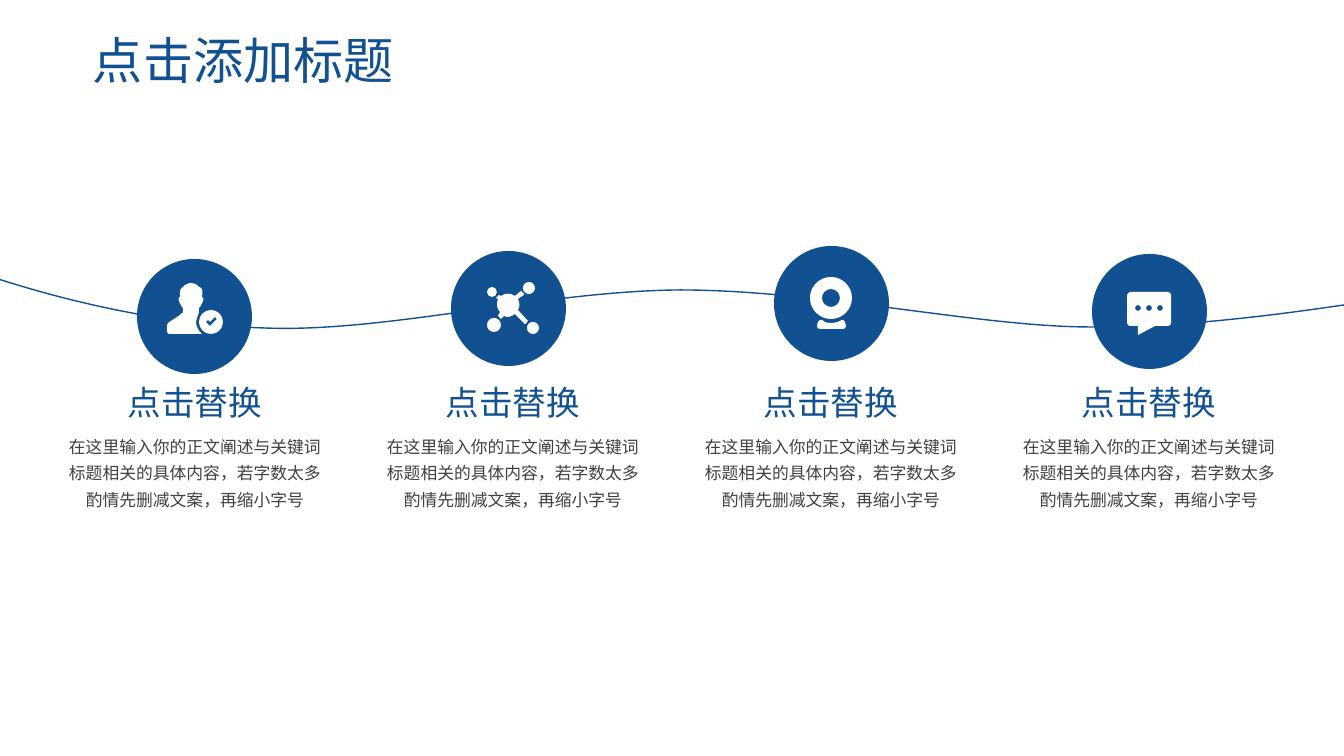
from lxml import etree
from pptx import Presentation
from pptx.dml.color import RGBColor
from pptx.enum.shapes import MSO_SHAPE
from pptx.enum.text import MSO_ANCHOR, MSO_AUTO_SIZE, PP_ALIGN
from pptx.oxml.ns import qn
from pptx.util import Pt

OVAL = MSO_SHAPE.OVAL
LEFT, CENTER = PP_ALIGN.LEFT, PP_ALIGN.CENTER
MIDDLE = MSO_ANCHOR.MIDDLE
NO_FIT, GROW = MSO_AUTO_SIZE.NONE, MSO_AUTO_SIZE.SHAPE_TO_FIT_TEXT

BLUE = RGBColor(0x12, 0x51, 0x91)
GREY = RGBColor(0x40, 0x40, 0x40)
WHITE = RGBColor(0xFF, 0xFF, 0xFF)
FONT = "Noto Sans CJK SC"
PX = 914400 / 100.8
ARC_HANDLE = 0.55


def circle(x, y, radius):
    handle = radius * ARC_HANDLE
    left, right, top, bottom = x - radius, x + radius, y - radius, y + radius
    return [
        (x, top),
        (x + handle, top, right, y - handle, right, y),
        (right, y + handle, x + handle, bottom, x, bottom),
        (x - handle, bottom, left, y + handle, left, y),
        (left, y - handle, x - handle, top, x, top),
    ]


TITLE = "点击添加标题"
HEADING = "点击替换"
BODY = "在这里输入你的正文阐述与关键词标题相关的具体内容，若字数太多酌情先删减文案，再缩小字号"

WAVE = [
    (-53, 261),
    (20, 289, 141, 324, 264, 328),
    (386, 333, 543, 291, 680, 290),
    (816, 290, 976, 326, 1085, 327),
    (1191, 328, 1300, 312, 1397, 297),
]
USER_ICON = [
    [(215, 317), (210, 322), (208, 320), (206, 322), (208, 324), (210, 326), (212, 324),
     (217, 319)],
    circle(211, 322, 12),
    [
        (191, 283), (193, 283, 195, 284, 196, 284), (198, 286, 199, 287, 199, 287),
        (199, 287, 204, 287, 202, 296), (202, 297, 202, 297, 202, 297),
        (203, 297, 204, 298, 203, 301), (202, 304, 201, 305, 201, 305),
        (201, 306, 200, 307, 199, 308), (199, 312),
        (198, 316, 196, 319, 196, 322), (196, 327, 199, 331, 202, 334),
        (169, 334), (168, 334, 167, 333, 167, 331), (167, 327),
        (167, 326, 167, 324, 168, 323), (175, 318, 181, 315, 182, 313),
        (183, 313, 183, 313, 183, 313), (183, 308),
        (182, 307, 181, 306, 181, 305), (181, 305, 180, 304, 179, 301),
        (178, 298, 179, 297, 180, 297), (180, 297, 180, 297, 180, 296),
        (180, 295, 180, 293, 180, 292), (180, 290, 181, 288, 183, 287),
        (183, 286, 184, 285, 185, 285), (186, 284, 187, 284, 188, 284),
        (188, 283, 189, 283, 191, 283),
    ],
]
NETWORK_ICON = [
    circle(533, 328, 6),
    circle(494, 325, 7),
    [
        (521, 291), (522, 292, 523, 293, 524, 294), (524, 295), (518, 299),
        (520, 303, 520, 307, 518, 310), (528, 321),
        (527, 322, 526, 323, 526, 324), (525, 324), (515, 314),
        (511, 317, 507, 318, 504, 316), (501, 319),
        (500, 318, 499, 317, 498, 316), (500, 312),
        (497, 309, 496, 304, 498, 299), (496, 298),
        (497, 297, 498, 296, 499, 295), (501, 296),
        (505, 293, 511, 293, 515, 296),
    ],
    circle(492, 292, 5),
    circle(529, 288, 6),
]
CAMERA_ICON = [
    circle(831, 298, 21),
    circle(831, 298, 9),
    [
        (843, 320), (843, 320, 842, 320, 842, 320), (838, 322, 836, 323, 831, 323),
        (826, 323, 824, 322, 822, 320), (821, 320, 820, 320, 820, 320),
        (819, 320, 818, 321, 818, 322), (817, 326),
        (817, 328, 818, 329, 820, 329), (843, 329),
        (845, 329, 846, 328, 846, 326), (845, 322),
        (845, 321, 844, 320, 843, 320),
    ],
]
CHAT_ICON = [
    [
        (1168, 292), (1130, 292), (1129, 292, 1127, 294, 1127, 295), (1127, 323),
        (1127, 325, 1129, 326, 1130, 326), (1138, 326), (1138, 335), (1155, 326),
        (1168, 326), (1170, 326, 1171, 325, 1171, 323), (1171, 295),
        (1171, 294, 1170, 292, 1168, 292),
    ],
    *[circle(x, 308, 3) for x in (1138, 1149, 1160)],
]
STEPS = [
    (137, 259, USER_ICON),
    (451, 251, NETWORK_ICON),
    (774, 246, CAMERA_ICON),
    (1092, 254, CHAT_ICON),
]
FIRST_CENTER, COLUMN_STEP = 195, 318
DISC_SIZE = 115
HEADING_WIDTH, BODY_WIDTH = 136, 255


def emu(*lengths):
    return [round(length * PX) for length in lengths]


def vertices(contour):
    return [
        emu(*segment[at:at + 2])
        for segment in contour for at in range(0, len(segment), 2)
    ]


def add_outline(page, contours, closed=True):
    builder = None
    for contour in contours:
        start, *rest = vertices(contour)
        if builder is None:
            builder = page.shapes.build_freeform(*start, scale=1.0)
        else:
            builder.move_to(*start)
        builder.add_line_segments(rest, close=closed)
    outline = builder.convert_to_shape()
    outline.shadow.inherit = False

    lines = iter(list(outline._element.iter(qn("a:lnTo"))))
    for contour in contours:
        for segment in contour[1:]:
            line = next(lines)
            if len(segment) == 6:
                line.tag = qn("a:cubicBezTo")
                for handle in (next(lines), next(lines)):
                    line.append(handle[0])
                    handle.getparent().remove(handle)
    return outline


def fill_plain(shape, color):
    shape.shadow.inherit = False
    shape.fill.solid()
    shape.fill.fore_color.rgb = color
    shape.line.fill.background()


def write(box, text, size, color, align=CENTER, spacing=None, wrap=True, fit=GROW,
          margins=(0, 0, 0, 0)):
    frame = box.text_frame
    frame.word_wrap = wrap
    frame.auto_size = fit
    (frame.margin_left, frame.margin_top,
     frame.margin_right, frame.margin_bottom) = emu(*margins)
    para = frame.paragraphs[0]
    para.alignment = align
    para.line_spacing = spacing
    span = para.add_run()
    span.text = text
    span.font.size = Pt(size)
    span.font.name = FONT
    span.font.color.rgb = color
    latin = span.font._element.find(qn("a:latin"))
    latin.addnext(etree.Element(qn("a:ea"), typeface=FONT))


def main():
    deck = Presentation()
    deck.slide_width, deck.slide_height = emu(1344, 756)
    page = deck.slides.add_slide(deck.slide_layouts[5])

    title = page.shapes.title
    title.left, title.top, title.width, title.height = emu(83, 31, 1159, 50)
    title.text_frame.vertical_anchor = MIDDLE
    write(title, TITLE, 35.8, BLUE, align=LEFT, spacing=0.9, fit=NO_FIT,
          margins=(10, 19, 10, 5))

    wave = add_outline(page, [WAVE], closed=False)
    wave.fill.background()
    wave.line.color.rgb = BLUE
    wave.line.width = Pt(1)

    for index, (left, top, icon) in enumerate(STEPS):
        center = FIRST_CENTER + index * COLUMN_STEP
        disc = page.shapes.add_shape(OVAL, *emu(left, top, DISC_SIZE, DISC_SIZE))
        fill_plain(disc, BLUE)
        heading = page.shapes.add_textbox(
            *emu(center - HEADING_WIDTH / 2, 382, HEADING_WIDTH, 40))
        write(heading, HEADING, 24, BLUE, wrap=False)
        body = page.shapes.add_textbox(*emu(center - BODY_WIDTH / 2, 431, BODY_WIDTH, 77))
        write(body, BODY, 12, GREY, spacing=1.3)
        fill_plain(add_outline(page, icon), WHITE)

    deck.save("out.pptx")


if __name__ == "__main__":
    main()
